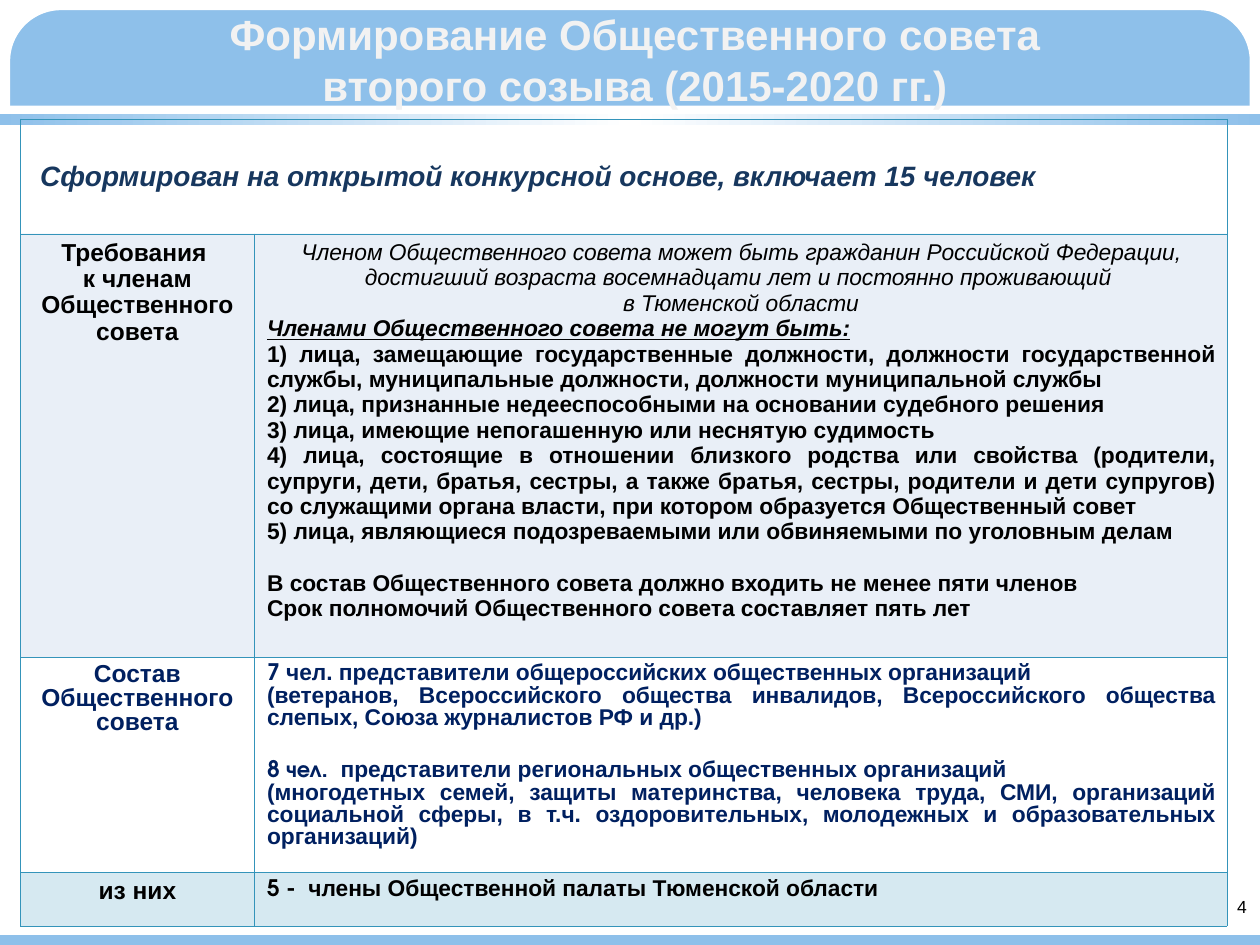
from pptx import Presentation
from pptx.dml.color import RGBColor
from pptx.enum.shapes import MSO_SHAPE
from pptx.enum.text import MSO_ANCHOR, PP_ALIGN
from pptx.oxml import parse_xml
from pptx.oxml.ns import nsdecls, qn
from pptx.util import Cm, Pt
from lxml import etree

RECT = MSO_SHAPE.RECTANGLE
ROUND = MSO_SHAPE.ROUNDED_RECTANGLE
MIDDLE = MSO_ANCHOR.MIDDLE
LEFT, CENTER, JUST = PP_ALIGN.LEFT, PP_ALIGN.CENTER, PP_ALIGN.JUSTIFY

SKY = RGBColor(0x8E, 0xC0, 0xEA)
WHITE = RGBColor(0xFF, 0xFF, 0xFF)
PALE = RGBColor(0xF2, 0xF2, 0xF2)
BLACK = RGBColor(0, 0, 0)
STEEL = RGBColor(0x17, 0x37, 0x5E)
NAVY = RGBColor(0x00, 0x20, 0x60)
MIST = RGBColor(0x95, 0xB3, 0xD7)
TEAL = RGBColor(0x34, 0x94, 0xBA)

WIDE, HIGH = 25.4, 19.05
SANS, ROUNDED = "Arial", "TeX Gyre Adventor"


class Deck:
    def __init__(self):
        self.show = Presentation()
        self.show.slide_width, self.show.slide_height = Cm(WIDE), Cm(HIGH)
        self.slide = self.show.slides.add_slide(self.show.slide_layouts[6])
        self.shapes = self.slide.shapes

    def paint(self, shape, fill=None, line=None, width=0):
        shape.shadow.inherit = False
        if fill is None:
            shape.fill.background()
        else:
            shape.fill.solid()
            shape.fill.fore_color.rgb = fill
        if line is None:
            shape.line.fill.background()
        else:
            shape.line.color.rgb = line
            shape.line.width = Pt(width)
        return shape

    def box(self, kind, spot, **look):
        return self.paint(self.shapes.add_shape(kind, *map(Cm, spot)), **look)

    def outline(self, points, fill):
        spots = [(Cm(x), Cm(y)) for x, y in points]
        shape = self.shapes.build_freeform(*spots[0])
        shape.add_line_segments(spots[1:])
        self.paint(shape.convert_to_shape(), fill)

    def fade(self, spot, stops):
        props = self.box(RECT, spot, fill=WHITE)._element.spPr
        marks = "".join(
            f'<a:gs pos="{place * 1000}"><a:srgbClr val="{color}"/></a:gs>'
            for place, color in stops)
        grad = parse_xml(f'<a:gradFill {nsdecls("a")}><a:gsLst>{marks}</a:gsLst>'
                         '<a:lin ang="0" scaled="0"/></a:gradFill>')
        props.replace(props.find(qn("a:solidFill")), grad)

    def fill_text(self, frame, lines, size, color, align=LEFT, bold=True,
                  italic=False, line=1.0):
        for count, item in enumerate(lines):
            text, extra = item if isinstance(item, tuple) else (item, {})
            para = frame.paragraphs[0] if count == 0 else frame.add_paragraph()
            para.alignment = extra.get("align", align)
            para.line_spacing = line
            if "gap" in extra:
                para.space_before = Pt(extra["gap"])
            font = para.font
            font.size, font.color.rgb = Pt(size), color
            font.bold = extra.get("bold", bold)
            font.italic = extra.get("italic", italic)
            if "under" in extra:
                font.underline = True
            if "lead" in extra:
                for part, name in ((extra["lead"], ROUNDED), (text, SANS)):
                    run = para.add_run()
                    run.text, run.font.name = part, name
            else:
                font.name = SANS
                para.add_run().text = text

    def text(self, spot, lines, size, color, wrap=True, **look):
        frame = self.shapes.add_textbox(*map(Cm, spot)).text_frame
        frame.word_wrap = wrap
        frame.vertical_anchor = MIDDLE
        self.fill_text(frame, lines, size, color, **look)

    def table(self, spot, cols, rows):
        area = (*spot, sum(cols), sum(rows))
        grid = self.shapes.add_table(len(rows), len(cols), *map(Cm, area)).table
        grid.first_row = grid.horz_banding = False
        for col, width in zip(grid.columns, cols):
            col.width = Cm(width)
        for row, height in zip(grid.rows, rows):
            row.height = Cm(height)
        return grid

    def cell(self, cell, lines, size, color, fill=None, **look):
        props = cell._tc.get_or_add_tcPr()
        for side in ("lnL", "lnR", "lnT", "lnB"):
            edge = etree.SubElement(props, qn(f"a:{side}"), w=str(Pt(0.06)))
            ink = etree.SubElement(edge, qn("a:solidFill"))
            etree.SubElement(ink, qn("a:srgbClr"), val=str(TEAL))
        if fill is None:
            cell.fill.background()
        else:
            cell.fill.solid()
            cell.fill.fore_color.rgb = fill
            tint = props.find(qn("a:solidFill")).find(qn("a:srgbClr"))
            etree.SubElement(tint, qn("a:alpha"), val="20000")
        self.fill_text(cell.text_frame, lines, size, color, **look)


RULES = [
    ("Членом Общественного совета может быть гражданин Российской Федерации, достигший возраста восемнадцати лет и постоянно проживающий ",
     dict(align=CENTER, bold=False, italic=True)),
    ("в Тюменской области", dict(align=CENTER, bold=False, italic=True)),
    ("Членами Общественного совета не могут быть:", dict(italic=True, under=True)),
    "1) лица, замещающие государственные должности, должности государственной службы, муниципальные должности, должности муниципальной службы",
    "2) лица, признанные недееспособными на основании судебного решения",
    "3) лица, имеющие непогашенную или неснятую судимость",
    "4) лица, состоящие в отношении близкого родства или свойства (родители, супруги, дети, братья, сестры, а также братья, сестры, родители и дети супругов) со служащими органа власти, при котором образуется Общественный совет",
    "5) лица, являющиеся подозреваемыми или обвиняемыми по уголовным делам",
    ("В состав Общественного совета должно входить не менее пяти членов", dict(gap=15)),
    "Срок полномочий Общественного совета составляет пять лет",
]
MEMBERS = [
    ("чел. представители общероссийских общественных организаций", dict(lead="7 ")),
    "(ветеранов, Всероссийского общества инвалидов, Всероссийского общества слепых, Союза журналистов РФ и др.)",
    ("представители региональных общественных организаций", dict(lead="8 чел.  ", gap=17)),
    "(многодетных семей, защиты материнства, человека труда, СМИ, организаций социальной сферы, в т.ч. оздоровительных, молодежных и образовательных организаций)",
]
CORNER = [(0, 1.24), (0.36, 0.63), (0.71, 0.15), (1.24, 0), (0, 0)]


def main():
    deck = Deck()
    deck.box(RECT, (0, 0, WIDE, 2.13), fill=SKY)
    frame = deck.box(ROUND, (0.1, 0.1, 25.2, 18.85), line=WHITE, width=6)
    frame.adjustments[0] = 0.06
    deck.outline(CORNER, WHITE)
    deck.outline([(WIDE - x, y) for x, y in CORNER], WHITE)
    deck.box(RECT, (0, 18.85, WIDE, 0.2), fill=SKY)
    deck.fade((0, 2.29, WIDE, 0.23), [(0, SKY), (50, WHITE), (100, SKY)])
    deck.text((0.5, 0.05, 24.6, 2.28),
              ["Формирование Общественного совета", "второго созыва (2015-2020 гг.)"],
              24, PALE, align=CENTER)

    grid = deck.table((0.41, 2.4), (4.72, 19.61), (2.31, 8.53, 4.34, 1.09))
    head = grid.cell(0, 0)
    head.merge(grid.cell(0, 1))
    head.vertical_anchor = MIDDLE
    head.margin_left = Cm(0.4)
    deck.cell(head, ["Сформирован на открытой конкурсной основе, включает 15 человек"],
              16, STEEL, italic=True)

    names = [
        (["Требования ", "к членам Общественного совета"], BLACK, MIST, 0.96),
        (["Состав", "Общественного", "совета"], NAVY, None, 0.88),
        (["из них"], BLACK, TEAL, 0.96),
    ]
    facts = [
        (RULES, JUST, 1.0),
        (MEMBERS, JUST, 0.88),
        ([("члены Общественной палаты Тюменской области", dict(lead="5 -  "))], LEFT, 0.88),
    ]
    for row, (name, fact) in enumerate(zip(names, facts), 1):
        label, color, fill, pitch = name
        lines, align, line = fact
        deck.cell(grid.cell(row, 0), label, 14, color, fill, align=CENTER, line=pitch)
        deck.cell(grid.cell(row, 1), lines, 13, color, fill, align=align, line=line)

    deck.text((24.69, 17.93, 0.51, 0.69), ["4"], 10, BLACK, wrap=False, bold=False)
    deck.show.save("out.pptx")


if __name__ == "__main__":
    main()
